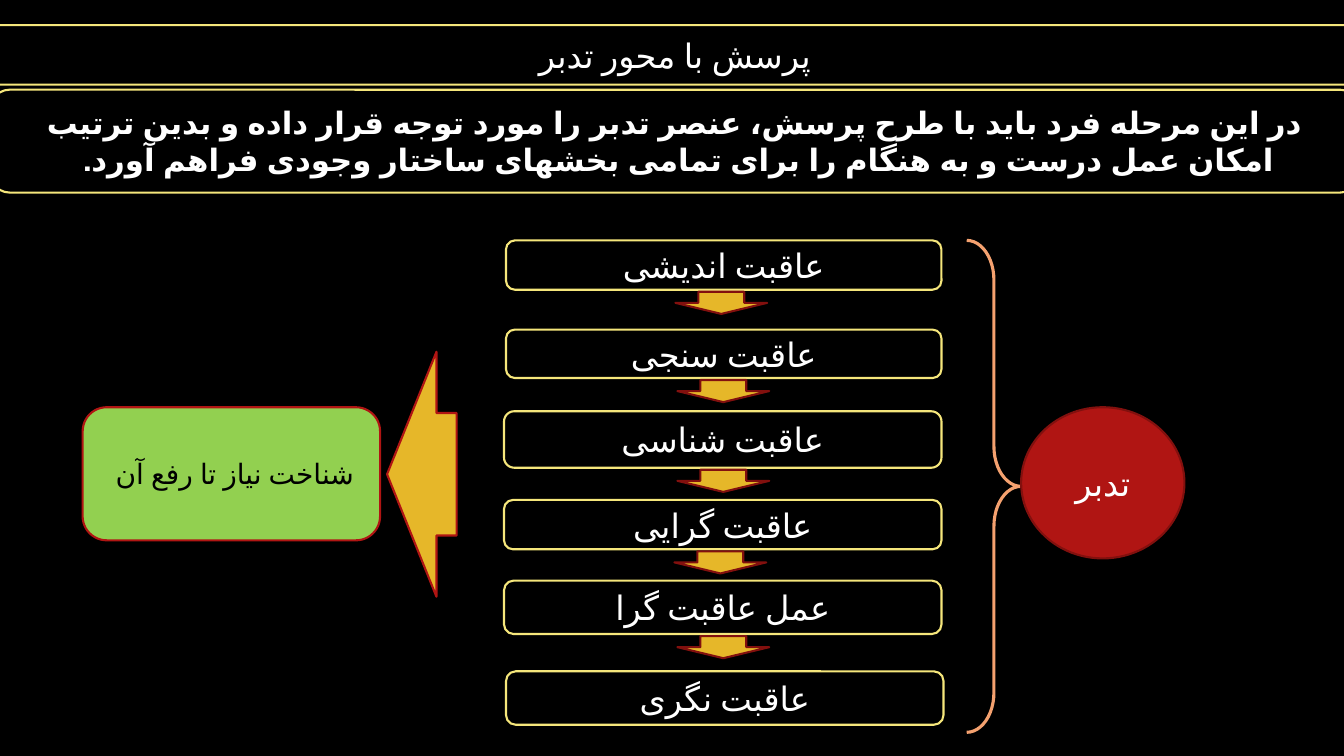
from pptx import Presentation
from pptx.dml.color import RGBColor
from pptx.enum.lang import MSO_LANGUAGE_ID
from pptx.enum.shapes import MSO_SHAPE
from pptx.enum.text import MSO_ANCHOR, PP_ALIGN
from pptx.util import Inches, Pt

FONT = "TeX Gyre Adventor"
BLACK, WHITE = "000000", "FFFFFF"
YELLOW, GOLD, ORANGE = "F5E67B", "E6B729", "F4A16F"
RED, DARK_RED, GREEN = "B01513", "82100E", "92D050"
CORNER = 0.181

# label, left, top, width, height, left of the arrow below (percent of the slide)
STEPS = [
    ("عاقبت اندیشی", 37.65, 31.8, 32.4, 6.53, 50.25),
    ("عاقبت سنجی", 37.65, 43.6, 32.4, 6.4, 50.4),
    ("عاقبت شناسی", 37.5, 54.4, 32.55, 7.47, 50.4),
    ("عاقبت گرایی", 37.5, 66.13, 32.55, 6.53, 50.18),
    ("عمل عاقبت گرا", 37.5, 76.8, 32.55, 7.07, 50.4),
    ("عاقبت نگری", 37.65, 88.8, 32.55, 7.07, None),
]
ARROW_GAP, ARROW_W, ARROW_H = 0.27, 6.83, 2.93


def color(value):
    return RGBColor.from_string(value)


class Deck:
    """Draws on one slide; boxes are left, top, width, height in percent of it."""

    def __init__(self):
        self.prs = Presentation()
        self.prs.slide_width, self.prs.slide_height = Inches(13.33), Inches(7.5)
        self.s = self.prs.slides.add_slide(self.prs.slide_layouts[6])
        self.s.background.fill.solid()
        self.s.background.fill.fore_color.rgb = color(BLACK)

    def shape(self, kind, box, line, fill=None, adj=(), weight=1.5):
        sides = (self.prs.slide_width, self.prs.slide_height) * 2
        sp = self.s.shapes.add_shape(
            kind, *(round(side * share / 100) for side, share in zip(sides, box)))
        for i, value in enumerate(adj):
            sp.adjustments[i] = value
        sp.shadow.inherit = False
        if fill:
            sp.fill.solid()
            sp.fill.fore_color.rgb = color(fill)
        else:
            sp.fill.background()
        sp.line.color.rgb = color(line)
        sp.line.width = Pt(weight)
        return sp

    def text(self, sp, text, size=24, ink=WHITE, bold=False):
        """Write one centred right-to-left paragraph."""
        tf = sp.text_frame
        tf.word_wrap = True
        tf.vertical_anchor = MSO_ANCHOR.MIDDLE
        p = tf.paragraphs[0]
        p.alignment = PP_ALIGN.CENTER
        p._p.get_or_add_pPr().set("rtl", "1")
        r = p.add_run()
        r.text = text
        r.font.size, r.font.bold, r.font.name = Pt(size), bold, FONT
        r.font.color.rgb = color(ink)
        r.font.language_id = MSO_LANGUAGE_ID.FARSI

    def panel(self, box, text, line=YELLOW, fill=None, **style):
        sp = self.shape(MSO_SHAPE.ROUNDED_RECTANGLE, box, line, fill, [CORNER])
        self.text(sp, text, **style)

    def circle(self, box, text):
        self.text(self.shape(MSO_SHAPE.OVAL, box, DARK_RED, RED), text)

    def down_arrow(self, box):
        self.shape(MSO_SHAPE.DOWN_ARROW, box, DARK_RED, GOLD)

    def result_arrow(self, box):
        sp = self.shape(MSO_SHAPE.RIGHT_ARROW, box, RED, GOLD, [0.5, 0.709])
        sp.rotation = 180

    def brace(self, box):
        self.shape(MSO_SHAPE.RIGHT_BRACE, box, ORANGE, adj=[0.732, 0.5], weight=2.25)


def main():
    deck = Deck()
    deck.panel((-1.35, 3.33, 103.13, 7.87), "پرسش با محور تدبر")
    deck.panel((-0.68, 11.87, 101.78, 13.6),
               "در این مرحله فرد باید با طرح پرسش، عنصر تدبر را مورد توجه قرار داده "
               "و بدین ترتیب امکان عمل درست و به هنگام را برای تمامی بخشهای ساختار "
               "وجودی فراهم آورد. ", size=22, bold=True)

    for label, left, top, width, height, arrow_left in STEPS:
        deck.panel((left, top, width, height), label)
        if arrow_left is not None:
            deck.down_arrow((arrow_left, top + height + ARROW_GAP, ARROW_W, ARROW_H))

    deck.brace((71.93, 31.8, 4.05, 65.07))
    deck.circle((75.98, 53.87, 12.15, 20), "تدبر")
    deck.result_arrow((28.8, 46.53, 5.18, 32.4))
    deck.panel((6.15, 53.87, 22.13, 17.6), "شناخت نیاز تا رفع آن ",
               line=RED, fill=GREEN, size=20, ink=BLACK)
    deck.prs.save("out.pptx")


if __name__ == "__main__":
    main()
